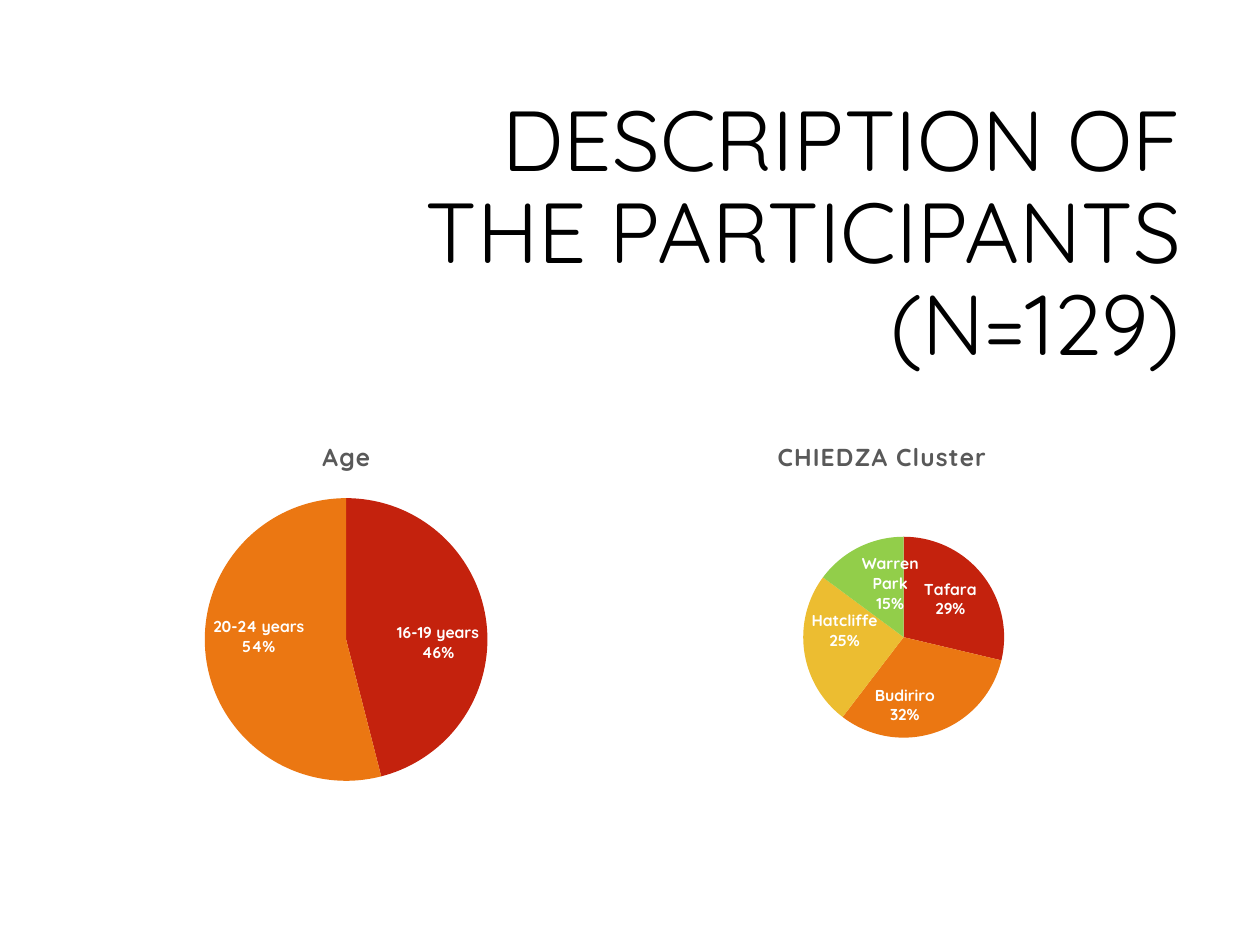
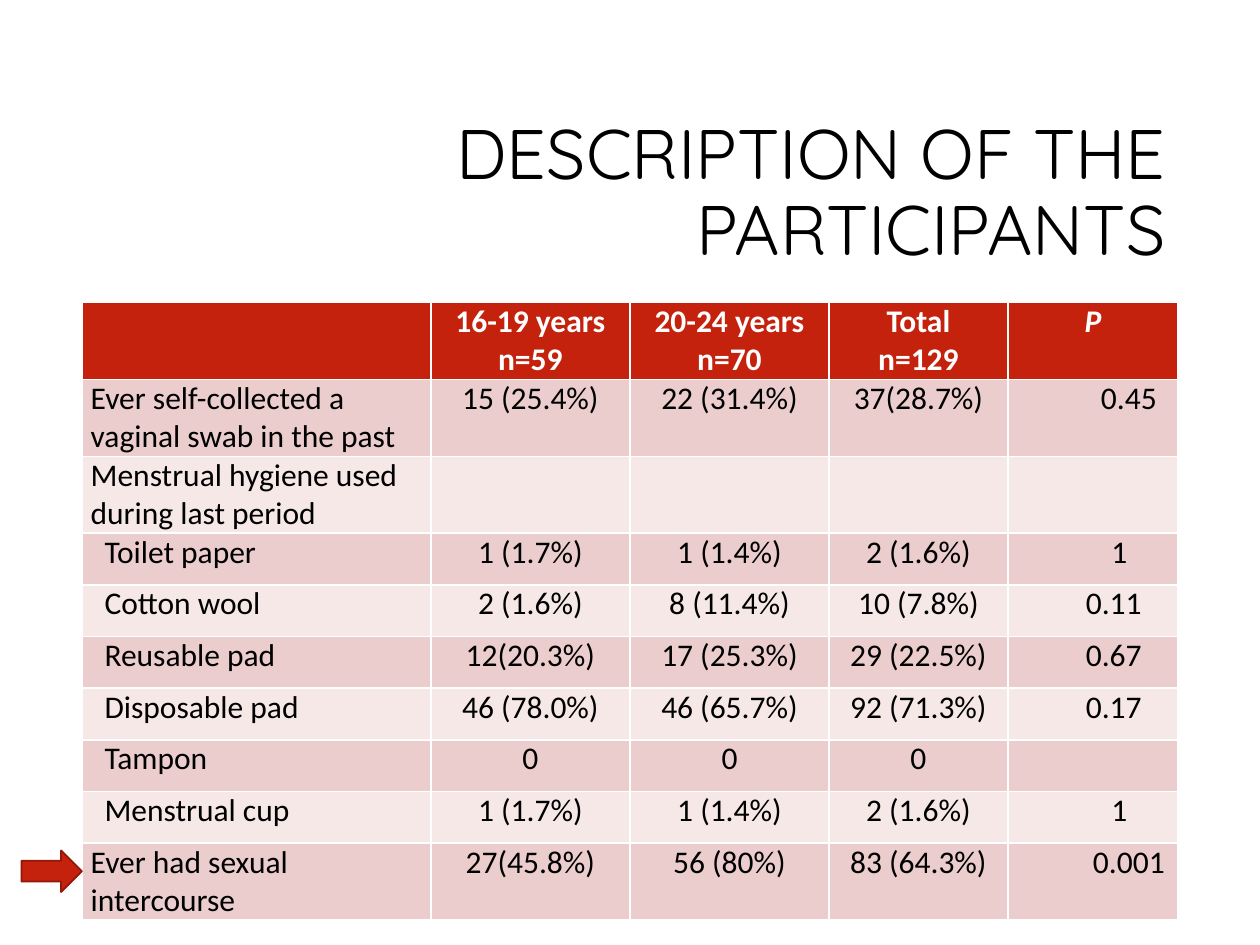
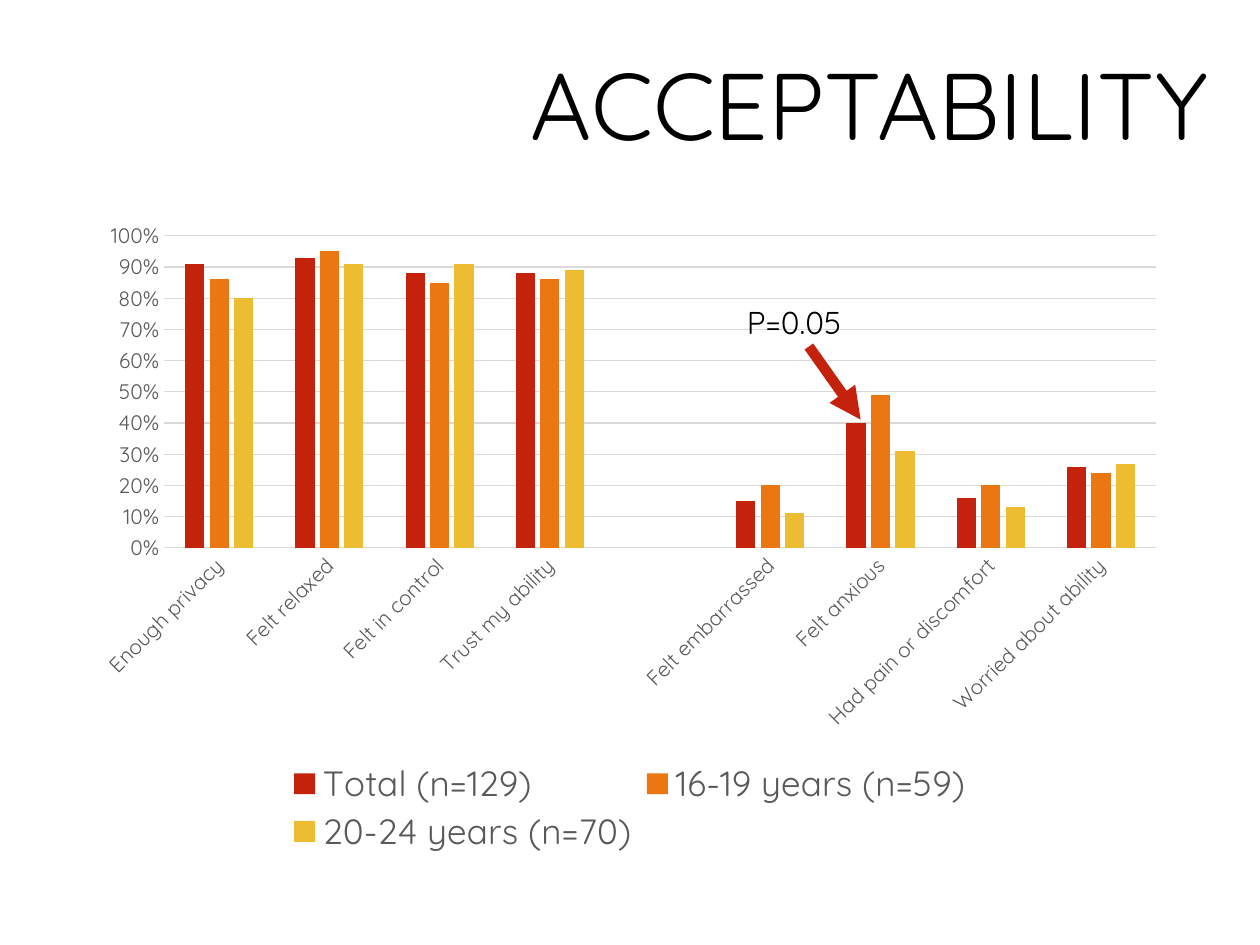
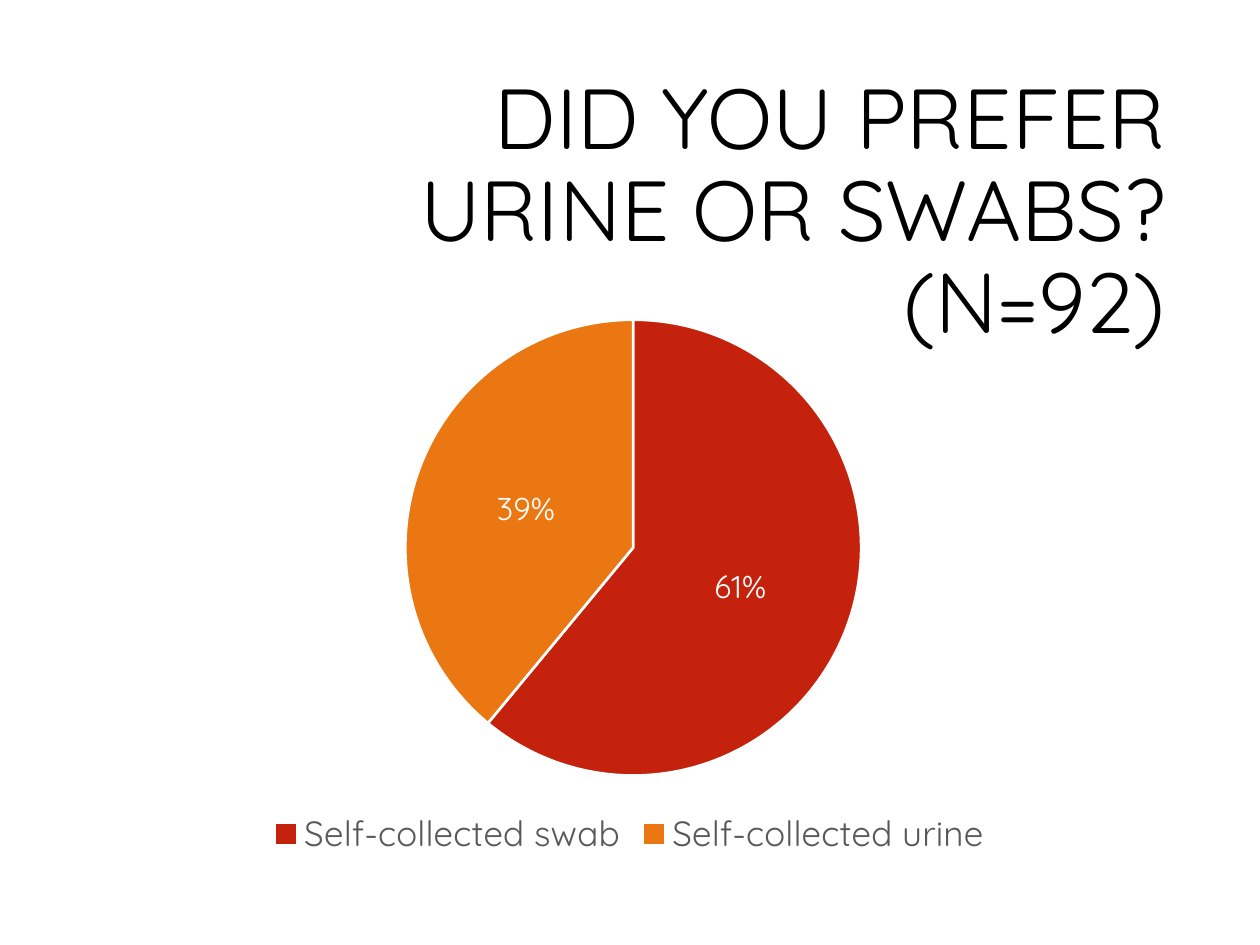
from dataclasses import dataclass

from lxml.etree import SubElement
from pptx import Presentation
from pptx.chart.data import CategoryChartData
from pptx.dml.color import RGBColor
from pptx.enum.chart import XL_CHART_TYPE as ChartType
from pptx.enum.chart import XL_LABEL_POSITION as LabelPosition
from pptx.enum.chart import XL_LEGEND_POSITION as LegendPosition
from pptx.enum.chart import XL_TICK_MARK as TickMark
from pptx.enum.shapes import MSO_CONNECTOR as Connector
from pptx.enum.shapes import MSO_SHAPE as Shape
from pptx.enum.text import MSO_ANCHOR as Anchor
from pptx.enum.text import MSO_AUTO_SIZE as AutoSize
from pptx.enum.text import PP_ALIGN as Align
from pptx.oxml import parse_xml
from pptx.oxml.ns import nsdecls, qn
from pptx.util import Inches, Pt


@dataclass(frozen=True)
class Theme:
    font: str = "Quicksand"
    table_font: str = "Calibri"
    black: str = "000000"
    white: str = "FFFFFF"
    gray: str = "595959"
    grid: str = "D9D9D9"
    red: str = "C4220D"
    dark_red: str = "91190A"
    orange: str = "EB7712"
    yellow: str = "ECBD31"
    green: str = "92CE4A"
    bands: tuple = ("EACDCC", "F5E8E7")
    small_title: float = 40
    medium_title: float = 48.6
    large_title: float = 54
    legend: float = 20
    body: float = 18
    chart_title: float = 14
    axis: float = 12
    chart: float = 10
    label: float = 9

    @property
    def series(self):
        return self.red, self.orange, self.yellow, self.green


THEME = Theme()

COLUMN_WIDTHS = (2.77, 1.58, 1.58, 1.42, 1.35)
ROW_HEIGHT = 0.41
OPTION_INDENT = 0.11
HEADER = ("", "16-19 years\nn=59", "20-24 years\nn=70", "Total\nn=129", "P")
PARTICIPANT_ROWS = (
    (0, 0.57, "Ever self-collected a vaginal swab in the past",
     "15 (25.4%)", "22 (31.4%)", "37(28.7%)", "0.45"),
    (0, 0, "Menstrual hygiene used during last period", "", "", "", ""),
    (OPTION_INDENT, 0.42, "Toilet paper", "1 (1.7%)", "1 (1.4%)", "2 (1.6%)", "1"),
    (OPTION_INDENT, 0.33, "Cotton wool", "2 (1.6%)", "8 (11.4%)", "10 (7.8%)", "0.11"),
    (OPTION_INDENT, 0.33, "Reusable pad", "12(20.3%)", "17 (25.3%)", "29 (22.5%)", "0.67"),
    (OPTION_INDENT, 0.33, "Disposable pad", "46 (78.0%)", "46 (65.7%)", "92 (71.3%)", "0.17"),
    (OPTION_INDENT, 0, "Tampon", "0", "0", "0", ""),
    (OPTION_INDENT, 0.42, "Menstrual cup", "1 (1.7%)", "1 (1.4%)", "2 (1.6%)", "1"),
    (0, 0.57, "Ever had sexual intercourse",
     "27(45.8%)", "56 (80%)", "83 (64.3%)", "0.001"),
)

FEELINGS = ("Enough privacy", "Felt relaxed", "Felt in control", "Trust my ability", "",
            "Felt embarrassed", "Felt anxious", "Had pain or discomfort",
            "Worried about ability")
FEELING_SHARES = {
    "Total (n=129)": (0.91, 0.93, 0.88, 0.88, None, 0.15, 0.4, 0.16, 0.26),
    "16-19 years (n=59)": (0.86, 0.95, 0.85, 0.86, None, 0.2, 0.49, 0.2, 0.24),
    "20-24 years (n=70)": (0.8, 0.91, 0.91, 0.89, None, 0.11, 0.31, 0.13, 0.27),
}


def rgb(color):
    return RGBColor.from_string(color)


def style_font(font, size, color, name=THEME.font, bold=False, italic=False):
    font.name, font.size, font.bold, font.italic = name, Pt(size), bold, italic
    font.color.rgb = rgb(color)


def paint(fill, color):
    fill.solid()
    fill.fore_color.rgb = rgb(color)


def draw_line(line, color, width):
    line.color.rgb = rgb(color)
    line.width = Pt(width)


def lengths(*box):
    return [Inches(value) for value in box]


def add_page(deck, title, box, size):
    page = deck.slides.add_slide(deck.slide_layouts[5])
    holder = page.shapes.title
    holder.left, holder.top, holder.width, holder.height = lengths(*box)
    frame = holder.text_frame
    frame.text = title
    frame.word_wrap = True
    frame.auto_size = AutoSize.NONE
    frame.vertical_anchor = Anchor.MIDDLE
    para = frame.paragraphs[0]
    para.alignment = Align.RIGHT
    para.line_spacing = 0.9
    style_font(para.font, size, THEME.black)
    return page


def set_layout(parent, index, area, inner=False):
    for old in parent.findall(qn("c:layout")):
        parent.remove(old)
    layout = parse_xml(f"<c:layout {nsdecls('c')}><c:manualLayout/></c:layout>")
    settings = [("layoutTarget", "inner")] if inner else []
    settings += [("xMode", "edge"), ("yMode", "edge"), *zip("xywh", area)]
    for tag, value in settings:
        SubElement(layout[0], qn(f"c:{tag}")).set("val", str(value))
    parent.insert(index, layout)


def add_chart(page, box, kind, categories, series, plot_area, number_format):
    data = CategoryChartData(number_format=number_format)
    data.categories = categories
    for name, values in series.items():
        data.add_series(name, values)
    chart = page.shapes.add_chart(kind, *lengths(*box), data).chart
    style_font(chart.font, THEME.chart, THEME.black)
    chart.has_title = False
    chart.has_legend = False
    set_layout(chart._chartSpace.chart.plotArea, 0, plot_area, inner=True)
    return chart


def add_chart_title(chart, text):
    chart.has_title = True
    chart.chart_title.include_in_layout = False
    frame = chart.chart_title.text_frame
    frame.text = text
    font = frame.paragraphs[0].font
    style_font(font, THEME.chart_title, THEME.gray, bold=True)
    font._element.set("spc", "50")


def add_legend(chart):
    chart.has_legend = True
    legend = chart.legend
    legend.position = LegendPosition.BOTTOM
    legend.include_in_layout = False
    style_font(legend.font, THEME.legend, THEME.gray)
    return legend


def add_pie(page, box, shares, plot_area, number_format="General", outline=False):
    chart = add_chart(page, box, ChartType.PIE, list(shares),
                      {"Series 1": list(shares.values())}, plot_area, number_format)
    plot = chart.plots[0]
    plot.vary_by_categories = True
    for index, color in enumerate(THEME.series[:len(shares)]):
        look = plot.series[0].points[index].format
        paint(look.fill, color)
        if outline:
            draw_line(look.line, THEME.white, 1.5)
        else:
            look.line.fill.background()
    return chart


def label_pie(chart, size, position, bold=False, with_names=False):
    labels = chart.plots[0].series[0].data_labels
    labels.number_format = "0%"
    labels.number_format_is_linked = False
    style_font(labels.font, size, THEME.white, bold=bold)
    labels.position = position
    labels.show_value = not with_names
    labels.show_percentage = with_names
    labels.show_category_name = with_names
    if with_names:
        separator = parse_xml(f"<c:separator {nsdecls('c')}>\n</c:separator>")
        labels._element.find(qn("c:showBubbleSize")).addnext(separator)


def fill_cell(cell, text, fill, color, align=Align.CENTER, margin=0, indent=0,
              bold=False, italic=False):
    paint(cell.fill, fill)
    cell.margin_left = cell.margin_right = Inches(0.07)
    cell.margin_top = cell.margin_bottom = 0
    cell.text_frame.text = text
    for para in cell.text_frame.paragraphs:
        para.alignment = align
        properties = para._p.get_or_add_pPr()
        properties.set("marL", str(Inches(margin)))
        properties.set("indent", str(Inches(indent)))
        style_font(para.font, THEME.body, color, THEME.table_font, bold, italic)


def add_participant_table(page, left, top):
    row_count = len(PARTICIPANT_ROWS) + 1
    box = lengths(left, top, sum(COLUMN_WIDTHS), ROW_HEIGHT * row_count)
    table = page.shapes.add_table(row_count, len(COLUMN_WIDTHS), *box).table
    for column, width in zip(table.columns, COLUMN_WIDTHS):
        column.width = Inches(width)
    for row in table.rows:
        row.height = Inches(ROW_HEIGHT)
    for column, text in enumerate(HEADER):
        fill_cell(table.cell(0, column), text, THEME.red, THEME.white,
                  bold=True, italic=text == "P")
    for number, (margin, indent, name, *counts, p_value) in enumerate(PARTICIPANT_ROWS, 1):
        band = THEME.bands[(number - 1) % 2]
        name_cell, *count_cells, p_cell = table.rows[number].cells
        fill_cell(name_cell, name, band, THEME.black, Align.LEFT, margin=margin)
        for cell, count in zip(count_cells, counts):
            fill_cell(cell, count, band, THEME.black)
        fill_cell(p_cell, p_value, band, THEME.black, indent=indent)


def add_row_arrow(page, left, top):
    arrow = page.shapes.add_shape(Shape.RIGHT_ARROW, *lengths(left, top, 0.48, 0.33))
    arrow.shadow.inherit = False
    paint(arrow.fill, THEME.red)
    draw_line(arrow.line, THEME.dark_red, 1)


def add_feeling_chart(page, box):
    chart = add_chart(page, box, ChartType.COLUMN_CLUSTERED, FEELINGS, FEELING_SHARES,
                      (0.075, 0.039, 0.905, 0.478), "0%")
    plot = chart.plots[0]
    plot.vary_by_categories = False
    plot.gap_width, plot.overlap = 219, -27
    for series, color in zip(plot.series, THEME.series):
        paint(series.format.fill, color)
    names, values = chart.category_axis, chart.value_axis
    for axis in (names, values):
        axis.major_tick_mark = axis.minor_tick_mark = TickMark.NONE
        style_font(axis.tick_labels.font, THEME.axis, THEME.gray)
    names._element.find(qn("c:txPr")).find(qn("a:bodyPr")).set("rot", "-2700000")
    draw_line(names.format.line, THEME.grid, 0.75)
    values.minimum_scale, values.maximum_scale, values.major_unit = 0, 1, 0.1
    values.tick_labels.number_format = "0%"
    values.tick_labels.number_format_is_linked = False
    values.format.line.fill.background()
    draw_line(values.major_gridlines.format.line, THEME.grid, 0.75)
    set_layout(add_legend(chart)._element, 1, (0.18, 0.84, 0.64, 0.15))


def add_significance_note(page, left, top):
    arrow = page.shapes.add_connector(
        Connector.STRAIGHT, *lengths(left + 0.59, top + 0.39, left + 1, top + 0.97))
    draw_line(arrow.line, THEME.red, 6)
    SubElement(arrow.line._get_or_add_ln(), qn("a:tailEnd")).set("type", "triangle")
    SubElement(arrow._element.spPr, qn("a:effectLst"))
    note = page.shapes.add_textbox(*lengths(left, top, 1.42, 0.4))
    frame = note.text_frame
    frame.text = "P=0.05"
    frame.word_wrap = True
    frame.auto_size = AutoSize.SHAPE_TO_FIT_TEXT
    style_font(frame.paragraphs[0].font, THEME.body, THEME.black)


def build_demographics(deck):
    page = add_page(deck, "DESCRIPTION OF THE PARTICIPANTS (N=129)",
                    (2.53, 1.17, 6.94, 1.4), THEME.medium_title)
    pies = (
        ("Age", 0.25, {"16-19 years": 46, "20-24 years": 54},
         (0.275, 0.208, 0.449, 0.748)),
        ("CHIEDZA Cluster", 4.5,
         {"Tafara": 29, "Budiriro": 32, "Hatcliffe": 25, "Warren Park": 15},
         (0.375, 0.31, 0.319, 0.532)),
    )
    for title, left, shares, plot_area in pies:
        chart = add_pie(page, (left, 3.33, 5, 3), shares, plot_area)
        add_chart_title(chart, title)
        label_pie(chart, THEME.label, LabelPosition.INSIDE_END, bold=True, with_names=True)


def build_participants(deck):
    page = add_page(deck, "DESCRIPTION OF THE PARTICIPANTS",
                    (2.38, 0.84, 6.97, 1.41), THEME.small_title)
    add_participant_table(page, 0.65, 2.4)
    add_row_arrow(page, 0.17, 6.75)


def build_acceptability(deck):
    page = add_page(deck, "ACCEPTABILITY", (2.75, 0.17, 6.94, 1.4), THEME.large_title)
    add_feeling_chart(page, (0.65, 1.67, 8.7, 5.18))
    add_significance_note(page, 5.83, 2.36)


def build_preference(deck):
    page = add_page(deck, "DID YOU PREFER URINE OR SWABS? (N=92)",
                    (2.41, 1, 6.94, 1.4), THEME.medium_title)
    chart = add_pie(page, (0.65, 2.4, 8.7, 4.45),
                    {"Self-collected swab": 0.61, "Self-collected urine": 0.39},
                    (0.295, 0.031, 0.416, 0.813), "0%", outline=True)
    label_pie(chart, THEME.body, LabelPosition.CENTER)
    add_legend(chart)


def main():
    deck = Presentation()
    deck.slide_width, deck.slide_height = Inches(10), Inches(7.5)
    for build in (build_demographics, build_participants,
                  build_acceptability, build_preference):
        build(deck)
    deck.save("out.pptx")


if __name__ == "__main__":
    main()
